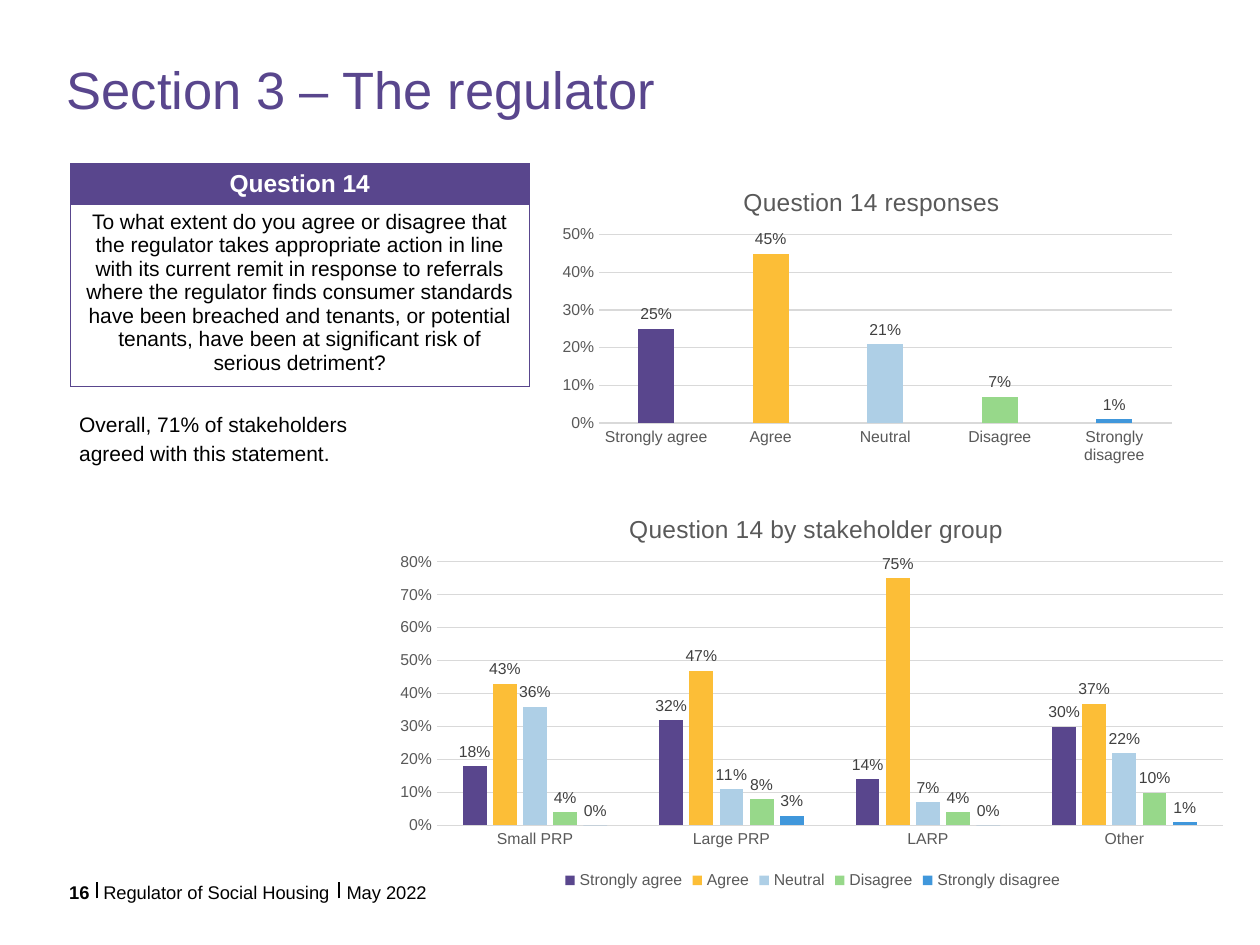
from dataclasses import dataclass

from lxml import etree
from pptx import Presentation
from pptx.chart.data import CategoryChartData
from pptx.dml.color import RGBColor
from pptx.enum.chart import (XL_CHART_TYPE, XL_LABEL_POSITION, XL_LEGEND_POSITION,
                             XL_TICK_MARK)
from pptx.enum.shapes import MSO_CONNECTOR
from pptx.enum.text import MSO_ANCHOR, MSO_AUTO_SIZE, PP_ALIGN
from pptx.oxml import parse_xml
from pptx.oxml.ns import nsdecls, qn
from pptx.util import Inches, Pt

COLUMN = XL_CHART_TYPE.COLUMN_CLUSTERED
OUTSIDE = XL_LABEL_POSITION.OUTSIDE_END
BOTTOM = XL_LEGEND_POSITION.BOTTOM
NO_TICK = XL_TICK_MARK.NONE
STRAIGHT = MSO_CONNECTOR.STRAIGHT
TOP = MSO_ANCHOR.TOP
LEFT, CENTER = PP_ALIGN.LEFT, PP_ALIGN.CENTER


@dataclass(frozen=True)
class Theme:
    font: str = "Arial"
    purple: str = "59468D"
    black: str = "000000"
    white: str = "FFFFFF"
    axis_text: str = "595959"
    label_text: str = "404040"
    grid: str = "D9D9D9"
    answers: tuple = ("59468D", "FCBE37", "AECFE6", "97D88A", "4097DB")
    title: float = 30
    heading: float = 14
    body: float = 12
    footer: float = 10.5
    chart: float = 9


THEME = Theme()
ANSWERS = ("Strongly agree", "Agree", "Neutral", "Disagree", "Strongly disagree")
OVERALL = {"Series 1": (0.25, 0.45, 0.21, 0.07, 0.01)}
GROUPS = ("Small PRP", "Large PRP", "LARP", "Other")
BY_GROUP = dict(zip(ANSWERS, (
    (0.18, 0.32, 0.14, 0.30),
    (0.43, 0.47, 0.75, 0.37),
    (0.36, 0.11, 0.07, 0.22),
    (0.04, 0.08, 0.04, 0.10),
    (0, 0.03, 0, 0.01),
)))
QUESTION = ("To what extent do you agree or disagree that the regulator takes appropriate "
            "action in line with its current remit in response to referrals where the "
            "regulator finds consumer standards have been breached and tenants, or "
            "potential tenants, have been at significant risk of serious detriment?")


def inches(box):
    return [Inches(length) for length in box]


def style_font(font, size, color, bold=False):
    font.name = THEME.font
    font.size = Pt(size)
    font.bold = bold
    font.color.rgb = RGBColor.from_string(color)


def paint(fill, color):
    fill.solid()
    fill.fore_color.rgb = RGBColor.from_string(color)


def write(frame, text, size, color=THEME.black, bold=False, align=LEFT):
    para = frame.paragraphs[0]
    para.alignment = align
    span = para.add_run()
    span.text = text
    style_font(span.font, size, color, bold)
    return para


def clear_margins(frame):
    frame.margin_left = frame.margin_right = frame.margin_top = frame.margin_bottom = 0


def add_text(page, box, text, size, inset=True, **look):
    frame = page.shapes.add_textbox(*inches(box)).text_frame
    frame.word_wrap = True
    if not inset:
        clear_margins(frame)
    return write(frame, text, size, **look)


def place_title(page, box, text):
    title = page.shapes.title
    title.left, title.top, title.width, title.height = inches(box)
    frame = title.text_frame
    clear_margins(frame)
    frame.auto_size = MSO_AUTO_SIZE.NONE
    frame.vertical_anchor = TOP
    write(frame, text, THEME.title, THEME.purple).line_spacing = 0.9


def outline_cell(cell):
    properties = cell._tc.get_or_add_tcPr()
    for position, edge in enumerate(("lnL", "lnR", "lnT", "lnB")):
        properties.insert(position, parse_xml(
            f'<a:{edge} {nsdecls("a")} w="{Pt(0.5)}"><a:solidFill>'
            f'<a:srgbClr val="{THEME.purple}"/></a:solidFill></a:{edge}>'))


def add_question(page, box, heading, question):
    table = page.shapes.add_table(2, 1, *inches(box)).table
    table.first_row = table.horz_banding = False
    table.rows[0].height, table.rows[1].height = Inches(0.28), Inches(1.45)
    head, body = table.cell(0, 0), table.cell(1, 0)
    paint(head.fill, THEME.purple)
    paint(body.fill, THEME.white)
    write(head.text_frame, heading, THEME.heading, THEME.white, True, CENTER)
    write(body.text_frame, question, THEME.body, align=CENTER)
    for cell in (head, body):
        outline_cell(cell)


def set_layout(element, **places):
    """Fix a chart part at fractions of the chart's size."""
    for old in element.findall(qn("c:layout")):
        element.remove(old)
    layout = parse_xml(f'<c:layout {nsdecls("c")}><c:manualLayout/></c:layout>')
    manual = layout[0]
    if "w" in places:
        etree.SubElement(manual, qn("c:layoutTarget")).set("val", "inner")
    for side in ("x", "y"):
        etree.SubElement(manual, qn(f"c:{side}Mode")).set("val", "edge")
    for name, value in places.items():
        etree.SubElement(manual, qn(f"c:{name}")).set("val", str(value))
    text = element.find(qn("c:tx"))
    element.insert(0 if text is None else 1, layout)


def style_axes(chart, top):
    values, categories = chart.value_axis, chart.category_axis
    for axis in (values, categories):
        axis.major_tick_mark = axis.minor_tick_mark = NO_TICK
        style_font(axis.tick_labels.font, THEME.chart, THEME.axis_text)
    values.minimum_scale, values.maximum_scale, values.major_unit = 0, top, 0.1
    values.tick_labels.number_format = "0%"
    values.tick_labels.number_format_is_linked = False
    values.format.line.fill.background()
    for line in (values.major_gridlines.format.line, categories.format.line):
        paint(line.fill, THEME.grid)
        line.width = Pt(0.75)


def add_columns(page, box, title, categories, series_values, top, title_at, plot_at):
    data = CategoryChartData(number_format="0%")
    data.categories = categories
    for name, values in series_values.items():
        data.add_series(name, values)
    chart = page.shapes.add_chart(COLUMN, *inches(box), data).chart
    style_font(chart.font, THEME.chart, THEME.axis_text)
    chart.has_title = True
    write(chart.chart_title.text_frame, title, THEME.heading, THEME.axis_text, align=CENTER)
    chart.chart_title.include_in_layout = False
    set_layout(chart.chart_title._element, **dict(zip("xy", title_at)))
    set_layout(chart._chartSpace.chart.plotArea, **dict(zip("xywh", plot_at)))
    style_axes(chart, top)

    plot = chart.plots[0]
    plot.gap_width, plot.overlap = 219, -27
    plot.vary_by_categories = False
    for series, color in zip(plot.series, THEME.answers):
        paint(series.format.fill, color)
        labels = series.data_labels
        labels.show_value = True
        labels.position = OUTSIDE
        labels.number_format, labels.number_format_is_linked = "0%", False
        style_font(labels.font, THEME.chart, THEME.label_text)
    chart.has_legend = len(series_values) > 1
    if chart.has_legend:
        chart.legend.position = BOTTOM
        chart.legend.include_in_layout = False
        style_font(chart.legend.font, THEME.chart, THEME.axis_text)
    else:
        for index, color in enumerate(THEME.answers):
            paint(plot.series[0].points[index].format.fill, color)


def add_footer(page, left, top, number, owner, date):
    for offset, width, text, look in (
            (0, 0.2, number, {"bold": True, "align": CENTER}),
            (0.29, 1.83, owner, {}),
            (2.22, 2.35, date, {})):
        add_text(page, (left + offset, top, width, 0.12), text, THEME.footer,
                 inset=False, **look)
    for offset in (0.24, 2.16):
        x = Inches(left + offset)
        rule = page.shapes.add_connector(STRAIGHT, x, Inches(top + 0.14), x, Inches(top + 0.01))
        paint(rule.line.fill, THEME.black)
        rule.line.width = Pt(0.75)
        etree.SubElement(rule._element.spPr, qn("a:effectLst"))


def main():
    deck = Presentation()
    deck.slide_width, deck.slide_height = Inches(10), Inches(7.5)
    page = deck.slides.add_slide(deck.slide_layouts.get_by_name("Title Only"))
    place_title(page, (0.53, 0.51, 8.87, 0.79), "Section 3 – The regulator")
    add_question(page, (0.56, 1.3, 3.64, 1.73), "Question 14", QUESTION)
    add_columns(page, (4.35, 1.3, 5.05, 2.45), "Question 14 responses", ANSWERS, OVERALL,
                0.5, (0.3, 0.06), (0.08, 0.23, 0.9, 0.61))
    summary = add_text(page, (0.53, 3.19, 2.62, 0.54),
                       "Overall, 71% of stakeholders agreed with this statement.", THEME.body)
    summary.line_spacing, summary.space_after = 1.14, Pt(6)
    add_columns(page, (3.06, 3.88, 6.78, 3.22), "Question 14 by stakeholder group", GROUPS,
                BY_GROUP, 0.8, (0.28, 0.05), (0.06, 0.18, 0.92, 0.65))
    add_footer(page, 0.53, 6.99, "16", "Regulator of Social Housing", "May 2022")
    deck.save("out.pptx")


if __name__ == "__main__":
    main()
